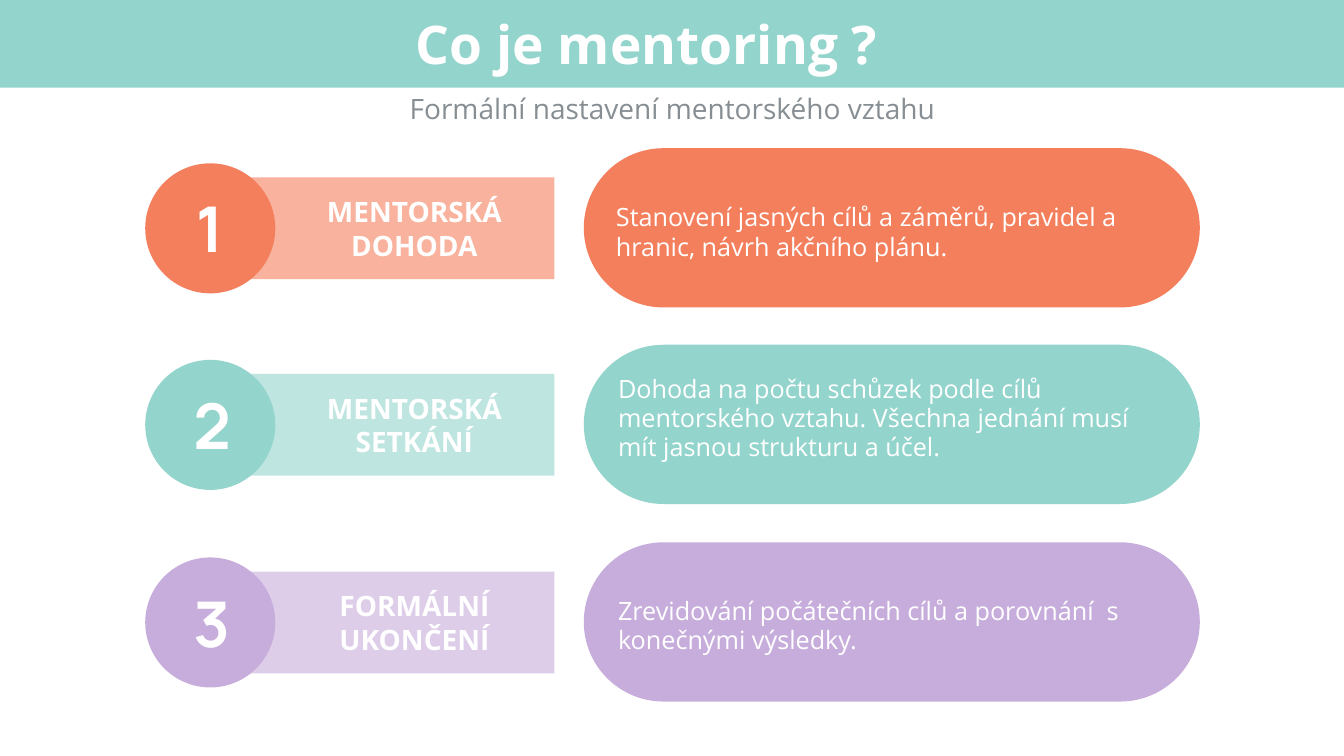
import pptx
import pptx.dml.color
import pptx.enum.shapes
import pptx.enum.text
import pptx.oxml
import pptx.oxml.ns
import pptx.util

SHAPE = pptx.enum.shapes.MSO_SHAPE
ANCHOR = pptx.enum.text.MSO_ANCHOR
ALIGN = pptx.enum.text.PP_ALIGN

EMU_PER_PX = 9144
WHITE, GREY = "FFFFFF", "868E93"
CORAL, MINT, LILAC = "F47F5D", "93D4CC", "C7ADDB"

ROW_TOP, TWICE_ROW_PITCH = 147, 391
ROWS = [
    (CORAL, "MENTORSKÁ DOHODA",
     "Stanovení jasných cílů a záměrů, pravidel a hranic, návrh akčního plánu.",
     (606, 199, 556, 64)),
    (MINT, "MENTORSKÁ SETKÁNÍ",
     "Dohoda na počtu schůzek podle cílů mentorského vztahu. "
     "Všechna jednání musí mít jasnou strukturu a účel.",
     (608, 369, 556, 93)),
    (LILAC, "FORMÁLNÍ UKONČENÍ",
     "Zrevidování počátečních cílů a porovnání  s konečnými výsledky.",
     (608, 589, 570, 64)),
]


def px(n):
    return pptx.util.Emu(n * EMU_PER_PX)


def rgb(hex_colour):
    return pptx.dml.color.RGBColor.from_string(hex_colour)


class Deck:
    font = "Open Sans"
    number_font = "Manrope"

    def __init__(self, width, height):
        self.prs = pptx.Presentation()
        self.prs.slide_width, self.prs.slide_height = px(width), px(height)

    def add_slide(self):
        self.s = self.prs.slides.add_slide(self.prs.slide_layouts[5])

    def shape(self, kind, box, fill, opacity=100):
        sp = self.s.shapes.add_shape(kind, *map(px, box))
        sp.shadow.inherit = False
        sp.fill.solid()
        sp.fill.fore_color.rgb = rgb(fill)
        sp.line.fill.background()
        if opacity < 100:
            colour = sp.element.spPr.find(".//" + pptx.oxml.ns.qn("a:srgbClr"))
            alpha = pptx.oxml.parse_xml(
                f'<a:alpha {pptx.oxml.ns.nsdecls("a")} val="{opacity * 1000}"/>')
            colour.append(alpha)
        return sp

    def set_text(self, sp, text, size, colour=WHITE, bold=False, font=None,
                 align=ALIGN.CENTER, anchor=ANCHOR.MIDDLE, inset=(10, 5), spacing=None):
        tf = sp.text_frame
        tf.text = text
        tf.word_wrap = True
        tf.auto_size = pptx.enum.text.MSO_AUTO_SIZE.NONE
        tf.vertical_anchor = anchor
        tf.margin_left = tf.margin_right = px(inset[0])
        tf.margin_top = tf.margin_bottom = px(inset[1])
        p = tf.paragraphs[0]
        p.alignment = align
        p.line_spacing = spacing
        r = p.runs[0]
        r.font.name = font or self.font
        r.font.size = pptx.util.Pt(size)
        r.font.bold = bold
        r.font.color.rgb = rgb(colour)

    def text(self, box, text, size, **style):
        sp = self.s.shapes.add_textbox(*map(px, box))
        self.set_text(sp, text, size, **style)

    def title(self, box, text, band, fill):
        sp = self.s.shapes.title
        sp.left, sp.top, sp.width, sp.height = map(px, box)
        self.set_text(sp, text, 38, bold=True, anchor=ANCHOR.TOP)
        sp.element.addprevious(self.shape(SHAPE.RECTANGLE, band, fill).element)

    def row(self, number, top, colour, label, description, description_box):
        self.shape(SHAPE.RECTANGLE, (224, top + 29, 326, 101), colour, opacity=60)
        self.shape(SHAPE.OVAL, (144, top + 15, 129, 129), colour)
        self.text((182, top + 36, 52, 86), str(number), 45, bold=True,
                  font=self.number_font)
        self.text((290, top + 41, 242, 77), label, 20, bold=True)
        pill = self.shape(SHAPE.ROUNDED_RECTANGLE, (579, top, 611, 158), colour)
        pill.adjustments[0] = 0.5
        self.text(description_box, description, 18, align=ALIGN.LEFT,
                  inset=(5, 2), spacing=0.97)


def main():
    deck = Deck(1333, 750)
    deck.add_slide()
    deck.title((372, 6, 539, 74), "Co je mentoring ?", (0, 0, 1333, 87), MINT)
    deck.text((344, 86, 646, 44), "Formální nastavení mentorského vztahu", 20,
              colour=GREY, anchor=ANCHOR.TOP)
    for i, row in enumerate(ROWS):
        deck.row(i + 1, ROW_TOP + i * TWICE_ROW_PITCH // 2, *row)
    deck.prs.save("out.pptx")


if __name__ == "__main__":
    main()
